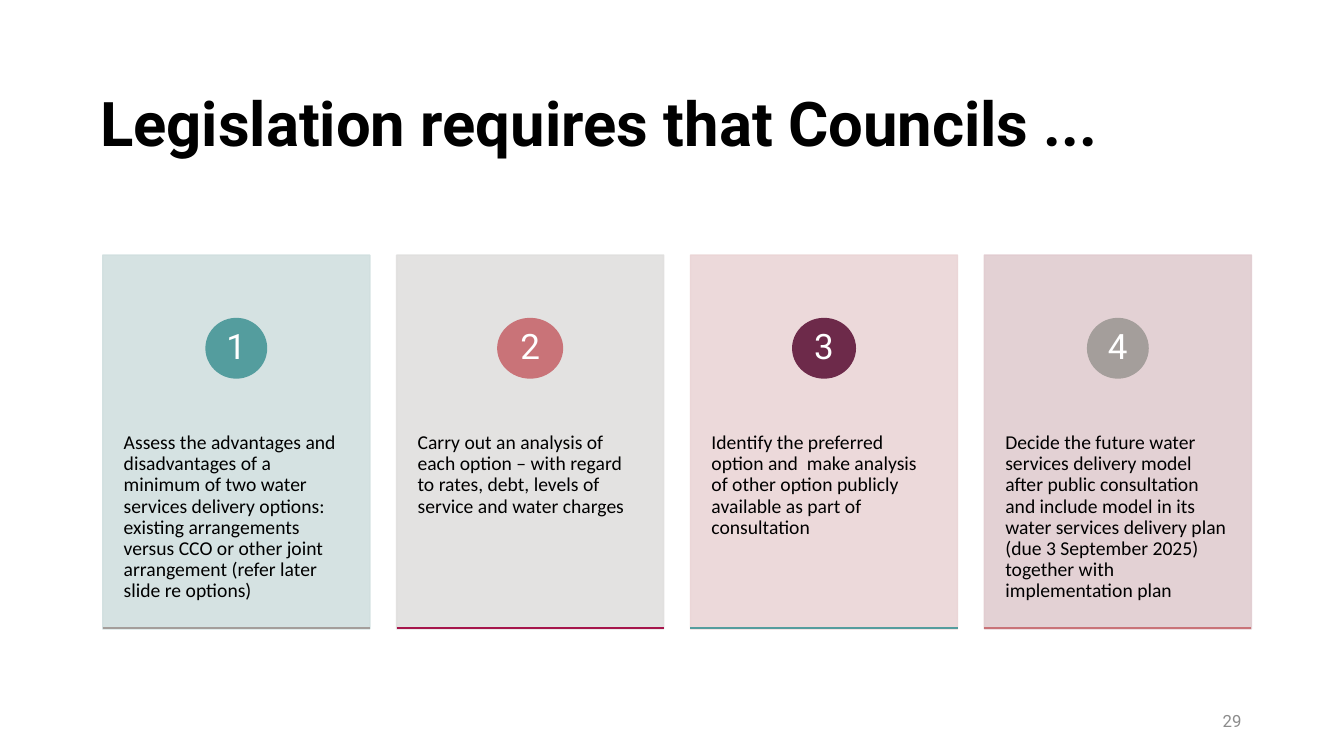
from lxml import etree
from pptx import Presentation
from pptx.dml.color import RGBColor
from pptx.enum.shapes import MSO_CONNECTOR, MSO_SHAPE
from pptx.enum.text import MSO_ANCHOR, MSO_AUTO_SIZE, PP_ALIGN
from pptx.oxml.ns import qn
from pptx.util import Pt

COLORS = {
    "black": "000000", "white": "FFFFFF", "page": "8C8C8C",
    "teal": "549D9E", "coral": "C97378", "plum": "6D2A4A",
    "stone": "A49E9B", "crimson": "A6154B",
    "pale_teal": "D1DFDF", "pale_gray": "E0DFDE",
    "pale_pink": "EBD5D6", "pale_plum": "E1CCD0",
}

# Card fill, circle fill, circle width, base line colour, text
STEPS = [
    ("pale_teal", "teal", 43.2, "stone",
     "Assess the advantages and disadvantages of a minimum of two water "
     "services delivery options: existing arrangements versus CCO or other "
     "joint arrangement (refer later slide re options)"),
    ("pale_gray", "coral", 46.2, "crimson",
     "Carry out an analysis of each option – with regard to rates, debt, "
     "levels of service and water charges"),
    ("pale_pink", "plum", 44.7, "teal",
     "Identify the preferred option and  make analysis of other option "
     "publicly available as part of consultation"),
    ("pale_plum", "stone", 43.2, "coral",
     "Decide the future water services delivery model after public "
     "consultation and include model in its water services delivery plan "
     "(due 3 September 2025) together with implementation plan"),
]

CARD_LEFT, CARD_TOP, CARD_W, CARD_H = 73.4, 182.2, 190.8, 267
CARD_PITCH = 209.9
CIRCLE_TOP, CIRCLE_H = 227.5, 42.5
TEXT_TOP, TEXT_H = 283, 160.6
BASE_Y = 448.7


def rgb(name):
    return RGBColor.from_string(COLORS[name])


def write(shape, text, font, size, color, align=PP_ALIGN.LEFT,
          anchor=MSO_ANCHOR.MIDDLE, insets=(7.2, 3.6), spacing=0.9, bold=False):
    """Put one formatted paragraph in a shape."""
    tf = shape.text_frame
    tf.word_wrap = True
    tf.auto_size = MSO_AUTO_SIZE.NONE
    tf.vertical_anchor = anchor
    tf.margin_left = tf.margin_right = Pt(insets[0])
    tf.margin_top = tf.margin_bottom = Pt(insets[1])
    p = tf.paragraphs[0]
    p.text = text
    p.alignment = align
    p.line_spacing = spacing
    p.font.name, p.font.size, p.font.bold = font, Pt(size), bold
    p.font.color.rgb = rgb(color)


def add_filled(s, kind, left, top, width, height, color, opacity=None):
    """Add a shape whose fill and outline share a colour."""
    sp = s.shapes.add_shape(kind, Pt(left), Pt(top), Pt(width), Pt(height))
    sp.shadow.inherit = False
    sp.fill.solid()
    sp.fill.fore_color.rgb = rgb(color)
    sp.line.color.rgb = rgb(color)
    sp.line.width = Pt(1)
    if opacity:
        for clr in sp._element.spPr.iter(qn("a:srgbClr")):
            etree.SubElement(clr, qn("a:alpha")).set("val", str(opacity * 1000))
    return sp


def add_text(s, left, top, width, height, text, *args, **kwargs):
    box = s.shapes.add_textbox(Pt(left), Pt(top), Pt(width), Pt(height))
    write(box, text, *args, **kwargs)


def add_base_line(s, left, color):
    line = s.shapes.add_connector(MSO_CONNECTOR.STRAIGHT, Pt(left), Pt(BASE_Y),
                                  Pt(left + CARD_W), Pt(BASE_Y))
    line.line.color.rgb = rgb(color)
    line.line.width = Pt(1)
    etree.SubElement(line._element.spPr, qn("a:effectLst"))


def add_step(s, number, card, circle, circle_w, base, text):
    left = CARD_LEFT + (number - 1) * CARD_PITCH
    add_filled(s, MSO_SHAPE.RECTANGLE, left, CARD_TOP, CARD_W, CARD_H, card, 90)
    add_text(s, left, TEXT_TOP, CARD_W, TEXT_H, text, "Calibri", 14, "black",
             anchor=MSO_ANCHOR.TOP, insets=(15, 26))
    badge = add_filled(s, MSO_SHAPE.OVAL, left + (CARD_W - circle_w) / 2,
                       CIRCLE_TOP, circle_w, CIRCLE_H, circle)
    write(badge, str(number), "Roboto", 25, "white", PP_ALIGN.CENTER,
          insets=(0, 0))
    add_base_line(s, left, base)


def add_title(s, text):
    title = s.shapes.title
    title.left, title.top = Pt(14.4), Pt(46)
    title.width, title.height = Pt(828), Pt(89.3)
    write(title, text, "Roboto", 44, "black", PP_ALIGN.CENTER, bold=True)


def main():
    prs = Presentation()
    prs.slide_width, prs.slide_height = Pt(960), Pt(540)
    s = prs.slides.add_slide(prs.slide_layouts[5])

    # Heading
    add_title(s, "Legislation requires that Councils ...")

    # Numbered step cards
    for number, step in enumerate(STEPS, 1):
        add_step(s, number, *step)

    # Page number
    add_text(s, 678, 500.4, 216, 28.8, "29", "Roboto", 12, "page",
             PP_ALIGN.RIGHT, spacing=1.0)

    prs.save("out.pptx")


if __name__ == "__main__":
    main()
